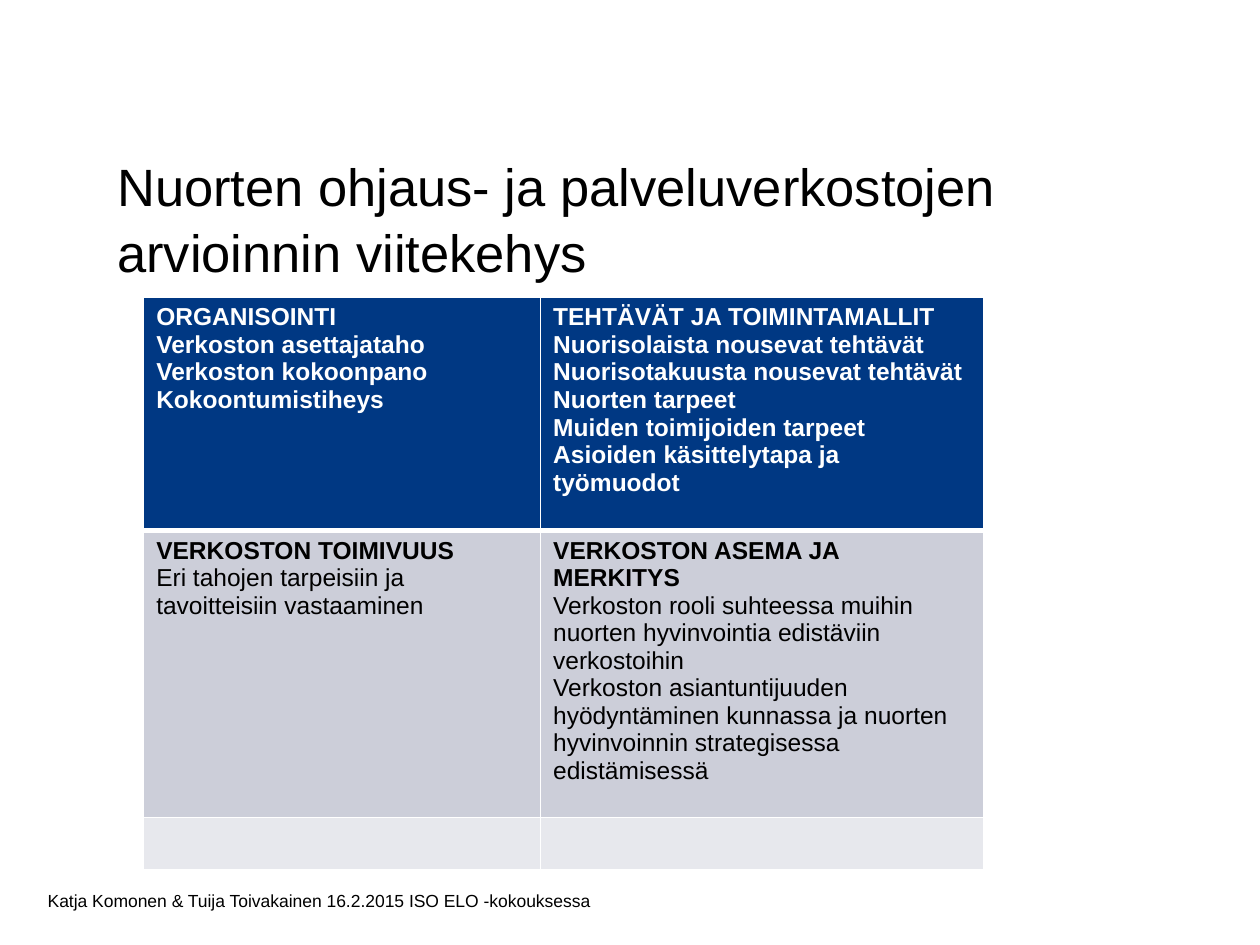
import dataclasses
import typing

import pptx
import pptx.dml.color
import pptx.enum.text
import pptx.oxml
import pptx.oxml.ns
import pptx.util

WIDTH, HEIGHT = 10, 7.5
FONT = "Arial"
BLACK, WHITE = "000000", "FFFFFF"
COLUMN_WIDTHS = [3.15, 3.52]
TABLE_LEFT, TABLE_TOP = 1.14, 2.36
THIN, THICK = 1, 3


@dataclasses.dataclass
class Row:
    height: float
    fill: str
    color: str
    bold_body: bool
    top: int
    bottom: int
    cells: list[list[str]]


ROWS = [
    Row(1.85, "003883", WHITE, True, THIN, THICK, [
        ["ORGANISOINTI", "Verkoston asettajataho", "Verkoston kokoonpano",
         "Kokoontumistiheys"],
        ["TEHTÄVÄT JA TOIMINTAMALLIT", "Nuorisolaista nousevat tehtävät",
         "Nuorisotakuusta nousevat tehtävät", "Nuorten tarpeet",
         "Muiden toimijoiden tarpeet", "Asioiden käsittelytapa ja työmuodot"],
    ]),
    Row(2.28, "CCCED9", BLACK, False, THICK, THIN, [
        ["VERKOSTON TOIMIVUUS",
         "Eri tahojen tarpeisiin ja tavoitteisiin vastaaminen"],
        ["VERKOSTON ASEMA JA MERKITYS",
         "Verkoston rooli suhteessa muihin nuorten hyvinvointia edistäviin verkostoihin",
         "Verkoston asiantuntijuuden hyödyntäminen kunnassa ja nuorten "
         "hyvinvoinnin strategisessa edistämisessä"],
    ]),
    Row(0.41, "E7E8ED", BLACK, False, THIN, THIN, [[], []]),
]


def rgb(color: str) -> pptx.dml.color.RGBColor:
    return pptx.dml.color.RGBColor.from_string(color)


def format_paragraph(para: typing.Any, size: float, color: str, bold: bool = False) -> None:
    para.alignment = pptx.enum.text.PP_ALIGN.LEFT
    for span in para.runs:
        span.font.name = FONT
        span.font.size = pptx.util.Pt(size)
        span.font.bold = bold
        span.font.color.rgb = rgb(color)


def set_borders(cell: typing.Any, top: int, bottom: int) -> None:
    properties = cell._tc.get_or_add_tcPr()
    widths = {"lnL": THIN, "lnR": THIN, "lnT": top, "lnB": bottom}
    for index, (side, width) in enumerate(widths.items()):
        line = pptx.oxml.parse_xml(
            f'<a:{side} {pptx.oxml.ns.nsdecls("a")} w="{pptx.util.Pt(width)}">'
            f'<a:solidFill><a:srgbClr val="{WHITE}"/></a:solidFill></a:{side}>')
        properties.insert(index, line)


def fill_cell(cell: typing.Any, lines: list[str], row: Row) -> None:
    cell.fill.solid()
    cell.fill.fore_color.rgb = rgb(row.fill)
    set_borders(cell, row.top, row.bottom)
    cell.text_frame.text = "\n".join(lines)
    for index, para in enumerate(cell.text_frame.paragraphs):
        format_paragraph(para, 14, row.color, index == 0 or row.bold_body)


def add_title(slide: typing.Any, text: str) -> None:
    title = slide.shapes.title
    title.left, title.top, title.width, title.height = map(
        pptx.util.Inches, (0.83, 1.15, 8.5, 0.7))
    frame = title.text_frame
    frame.text = text
    frame.word_wrap = True
    frame.auto_size = pptx.enum.text.MSO_AUTO_SIZE.NONE
    frame.vertical_anchor = pptx.enum.text.MSO_ANCHOR.TOP
    frame.paragraphs[0].line_spacing = 1.05
    format_paragraph(frame.paragraphs[0], 30, BLACK)


def add_framework_table(slide: typing.Any) -> None:
    table = slide.shapes.add_table(
        len(ROWS), len(COLUMN_WIDTHS),
        *map(pptx.util.Inches, (TABLE_LEFT, TABLE_TOP, sum(COLUMN_WIDTHS),
                                sum(row.height for row in ROWS)))).table
    for column, width in zip(table.columns, COLUMN_WIDTHS):
        column.width = pptx.util.Inches(width)
    for row_index, row in enumerate(ROWS):
        table.rows[row_index].height = pptx.util.Inches(row.height)
        for column_index, lines in enumerate(row.cells):
            fill_cell(table.cell(row_index, column_index), lines, row)


def add_footer(slide: typing.Any, text: str) -> None:
    box = slide.shapes.add_textbox(*map(pptx.util.Inches, (0.28, 6.95, 6.95, 0.4)))
    frame = box.text_frame
    frame.text = text
    frame.word_wrap = True
    frame.vertical_anchor = pptx.enum.text.MSO_ANCHOR.MIDDLE
    format_paragraph(frame.paragraphs[0], 10, BLACK)


def main() -> None:
    deck = pptx.Presentation()
    deck.slide_width = pptx.util.Inches(WIDTH)
    deck.slide_height = pptx.util.Inches(HEIGHT)
    slide = deck.slides.add_slide(deck.slide_layouts[5])
    add_title(slide, "Nuorten ohjaus- ja palveluverkostojen arvioinnin viitekehys")
    add_footer(slide, "Katja Komonen & Tuija Toivakainen 16.2.2015 ISO ELO -kokouksessa")
    add_framework_table(slide)
    deck.save("out.pptx")


if __name__ == "__main__":
    main()
